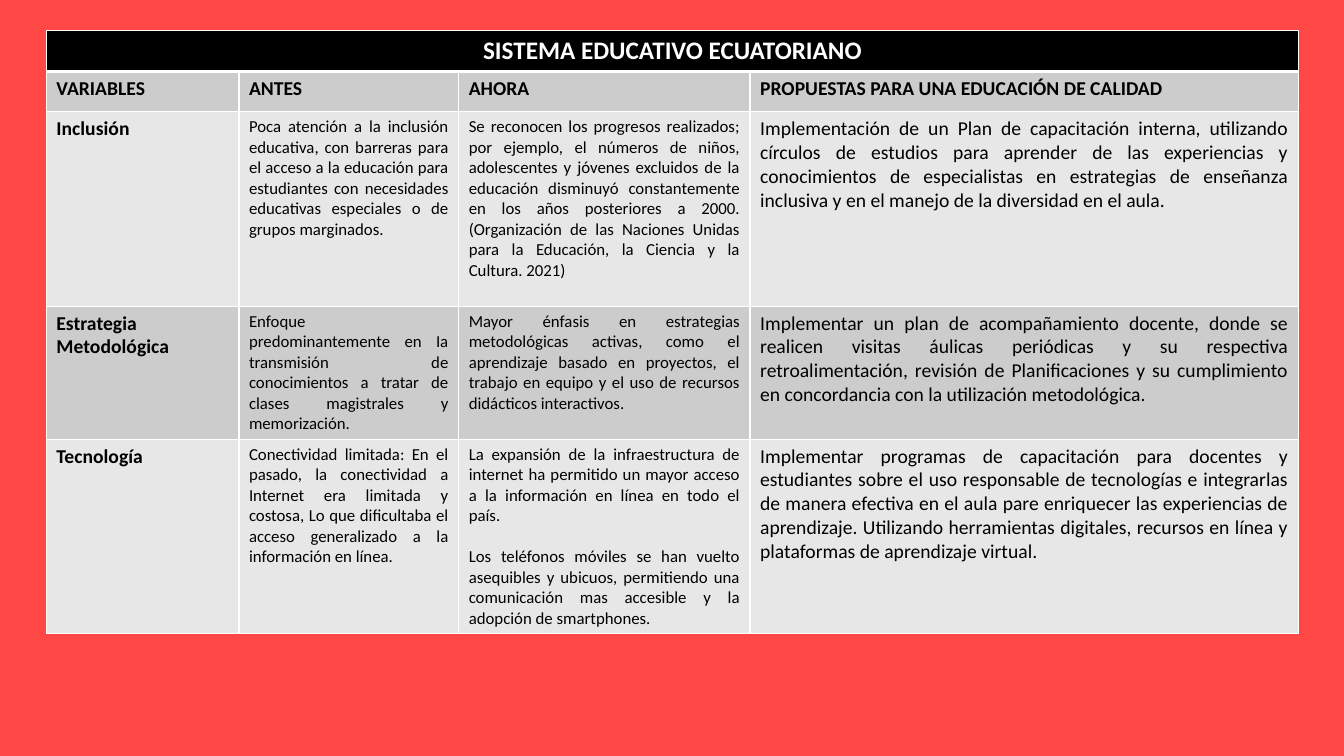
"""Build a slide with a table comparing the Ecuadorian school system before and now."""
import pptx
import pptx.dml.color
import pptx.enum.text
import pptx.oxml
import pptx.oxml.ns
import pptx.util

Inches, Pt = pptx.util.Inches, pptx.util.Pt
ALIGN = pptx.enum.text.PP_ALIGN

TITLE = "SISTEMA EDUCATIVO ECUATORIANO"
HEADS = ["VARIABLES", "ANTES", "AHORA", "PROPUESTAS PARA UNA EDUCACIÓN DE CALIDAD"]
TOPICS = [
    (
        "Inclusión",
        "Poca atención a la inclusión educativa, con barreras para el acceso a la educación para estudiantes con necesidades educativas especiales o de grupos marginados.",
        "Se reconocen los progresos realizados; por ejemplo, el números de niños, adolescentes y jóvenes excluidos de la educación disminuyó constantemente en los años posteriores a 2000. (Organización de las Naciones Unidas para la Educación, la Ciencia y la Cultura. 2021)",
        "Implementación de un Plan de capacitación interna, utilizando círculos de estudios para aprender de las experiencias y conocimientos de especialistas en estrategias de enseñanza inclusiva y en el manejo de la diversidad en el aula.",
    ),
    (
        "Estrategia Metodológica",
        "Enfoque predominantemente en Ia transmisión de conocimientos a tratar de clases magistrales y memorización.",
        "Mayor énfasis en estrategias metodológicas activas, como el aprendizaje basado en proyectos, el trabajo en equipo y el uso de recursos didácticos interactivos.",
        "Implementar un plan de acompañamiento docente, donde se realicen visitas áulicas periódicas y su respectiva retroalimentación, revisión de Planificaciones y su cumplimiento en concordancia con la utilización metodológica.",
    ),
    (
        "Tecnología",
        "Conectividad limitada: En el pasado, la conectividad a Internet era limitada y costosa, Lo que dificultaba el acceso generalizado a la información en línea.",
        "La expansión de la infraestructura de internet ha permitido un mayor acceso a la información en línea en todo el país.\nLos teléfonos móviles se han vuelto asequibles y ubicuos, permitiendo una comunicación mas accesible y la adopción de smartphones.",
        "Implementar programas de capacitación para docentes y estudiantes sobre el uso responsable de tecnologías e integrarlas de manera efectiva en el aula pare enriquecer las experiencias de aprendizaje. Utilizando herramientas digitales, recursos en línea y plataformas de aprendizaje virtual.",
    ),
]
LEFT, TOP = 0.46, 0.3
WIDTHS = [1.91, 2.18, 2.89, 5.44]
HEIGHTS = [0.41, 0.4, 1.93, 1.32, 1.92]
THEME = {
    "font": "Calibri", "back": "FF4745", "ink": "000000", "light": "FFFFFF",
    "bands": ["E7E7E7", "CCCCCC"],
    "title": 18, "head": 14, "body": 12, "gap": 14.6, "thin": 1, "thick": 3,
}


def color(name):
    return pptx.dml.color.RGBColor.from_string(name)


def write(frame, text, size=THEME["head"], bold=False, ink=THEME["ink"], align=ALIGN.LEFT):
    for i, line in enumerate(text.split("\n")):
        para = frame.add_paragraph() if i else frame.paragraphs[0]
        para.alignment = align
        para.space_before = Pt(THEME["gap"] if i else 0)
        run = para.add_run()
        run.text = line
        run.font.name = THEME["font"]
        run.font.size = Pt(size)
        run.font.bold = bold
        run.font.color.rgb = color(ink)


def paint(cell, fill, top, base):
    cell.fill.solid()
    cell.fill.fore_color.rgb = color(fill)
    props = cell._tc.get_or_add_tcPr()
    sides = {"L": THEME["thin"], "R": THEME["thin"], "T": top, "B": base}
    for i, (side, width) in enumerate(sides.items()):
        props.insert(i, pptx.oxml.parse_xml(
            f'<a:ln{side} {pptx.oxml.ns.nsdecls("a")} w="{Pt(width)}"><a:solidFill>'
            f'<a:srgbClr val="{THEME["light"]}"/></a:solidFill></a:ln{side}>'))


def main():
    deck = pptx.Presentation()
    deck.slide_width, deck.slide_height = Inches(13.33), Inches(7.5)
    slide = deck.slides.add_slide(deck.slide_layouts[6])
    slide.background.fill.solid()
    slide.background.fill.fore_color.rgb = color(THEME["back"])

    table = slide.shapes.add_table(
        len(HEIGHTS), len(WIDTHS), Inches(LEFT), Inches(TOP),
        Inches(sum(WIDTHS)), Inches(sum(HEIGHTS))).table
    for col, width in zip(table.columns, WIDTHS):
        col.width = Inches(width)
    for row, height in zip(table.rows, HEIGHTS):
        row.height = Inches(height)

    for r, row in enumerate(table.rows):
        for cell in row.cells:
            paint(cell, THEME["bands"][r % 2] if r else THEME["ink"],
                  THEME["thick" if r == 1 else "thin"],
                  THEME["thick" if r == 0 else "thin"])

    table.cell(0, 0).merge(table.cell(0, len(WIDTHS) - 1))
    write(table.cell(0, 0).text_frame, TITLE, size=THEME["title"], bold=True,
          ink=THEME["light"], align=ALIGN.CENTER)
    for r, texts in enumerate([HEADS, *TOPICS], 1):
        for c, text in enumerate(texts):
            label = r == 1 or c == 0
            small = not label and c < len(WIDTHS) - 1
            write(table.cell(r, c).text_frame, text, bold=label,
                  size=THEME["body" if small else "head"],
                  align=ALIGN.LEFT if label else ALIGN.JUSTIFY)
    deck.save("out.pptx")


if __name__ == "__main__":
    main()
